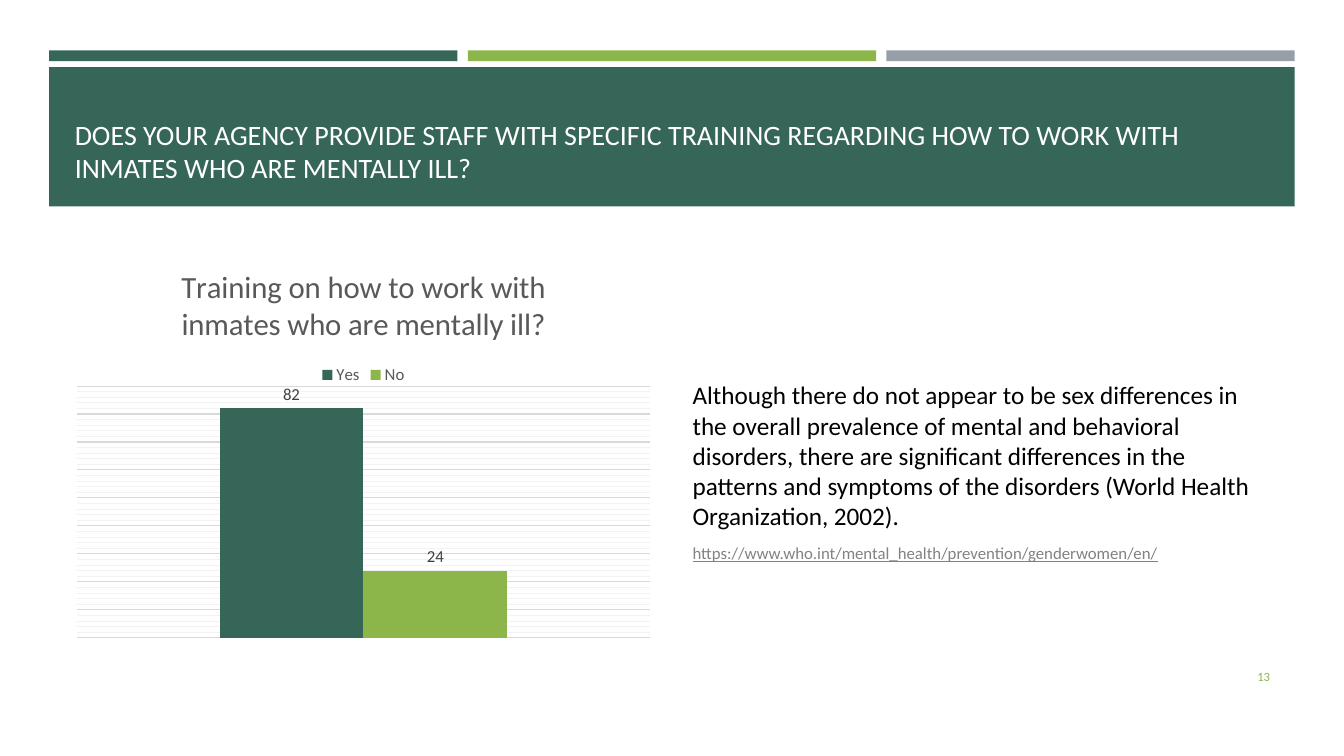
from copy import deepcopy

from lxml.etree import SubElement
from pptx import Presentation
from pptx.chart.data import CategoryChartData
from pptx.dml.color import RGBColor
from pptx.enum.chart import XL_CHART_TYPE as ChartType
from pptx.enum.chart import XL_LABEL_POSITION as LabelPosition
from pptx.enum.chart import XL_LEGEND_POSITION as LegendPosition
from pptx.enum.shapes import MSO_SHAPE as Preset
from pptx.enum.text import MSO_ANCHOR as Anchor
from pptx.enum.text import MSO_AUTO_SIZE as AutoSize
from pptx.enum.text import PP_ALIGN as Align
from pptx.oxml import parse_xml
from pptx.oxml.ns import nsdecls, qn
from pptx.util import Cm, Pt

COLORS = {
    "green": "366658", "lime": "8CB64A", "grey": "969FA7",
    "white": "FFFFFF", "black": "000000", "link": "828282",
    "heading": "595959", "label": "404040", "grid": "D9D9D9", "minor": "F2F2F2",
}


def color(name):
    return RGBColor.from_string(COLORS[name])


def set_font(font, size, tint, name="Calibri", underline=None):
    font.name, font.size, font.bold = name, Pt(size), False
    font.underline = underline
    font.color.rgb = color(tint)


def write(paragraph, text, size=18, tint="black", align=Align.LEFT,
          before=0, after=0, underline=None):
    paragraph.alignment = align
    paragraph.space_before, paragraph.space_after = Pt(before), Pt(after)
    run = paragraph.add_run()
    run.text = text
    set_font(run.font, size, tint, underline=underline)


class SlideBuilder:
    def __init__(self, slide):
        self.slide = slide

    def place(self, shape, left, top, width, height):
        shape.left, shape.top = Cm(left), Cm(top)
        shape.width, shape.height = Cm(width), Cm(height)

    def frame(self, shape, anchor):
        frame = shape.text_frame
        frame.word_wrap, frame.auto_size = True, AutoSize.NONE
        frame.vertical_anchor = anchor
        return frame

    def band(self, left, top, width, height, tint):
        band = self.slide.shapes.add_shape(
            Preset.RECTANGLE, Cm(left), Cm(top), Cm(width), Cm(height))
        band.shadow.inherit = False
        band.fill.solid()
        band.fill.fore_color.rgb = color(tint)
        band.line.fill.background()

    def title(self, text, *box):
        title = self.slide.shapes.title
        self.place(title, *box)
        title.element.getparent().append(title.element)
        write(self.frame(title, Anchor.BOTTOM).paragraphs[0], text, 20, "white")

    def body(self, entries, *box):
        body = self.slide.placeholders[1]
        self.place(body, *box)
        frame = self.frame(body, Anchor.MIDDLE)
        frame.margin_top = Cm(1.4)
        for index, (text, style) in enumerate(entries):
            paragraph = frame.add_paragraph() if index else frame.paragraphs[0]
            write(paragraph, text, after=6, **style)
            properties = paragraph._p.get_or_add_pPr()
            properties.set("marL", "0")
            properties.set("indent", "0")
            SubElement(properties, qn("a:buNone"))

    def number(self, text, *box):
        number = self.slide.shapes.add_textbox(*map(Cm, box))
        write(self.frame(number, Anchor.MIDDLE).paragraphs[0], text, 9, "lime",
              align=Align.RIGHT)

    def column_chart(self, heading, category, answers, *box):
        data = CategoryChartData()
        data.categories = [category]
        for name, count, tint in answers:
            data.add_series(name, [count])
        chart = self.slide.shapes.add_chart(
            ChartType.COLUMN_CLUSTERED, *map(Cm, box), data).chart
        set_font(chart.font, 10, "black")
        chart.has_title = True
        write(chart.chart_title.text_frame.paragraphs[0], heading, 22, "heading",
              align=Align.CENTER)
        chart.chart_title.include_in_layout = False
        chart.has_legend = True
        chart.legend.position = LegendPosition.TOP
        chart.legend.include_in_layout = False
        set_font(chart.legend.font, 12, "heading")

        chart.category_axis.visible = False
        self.rule_axis(chart)
        plot = chart.plots[0]
        plot.gap_width, plot.overlap, plot.vary_by_categories = 199, 0, False
        for series, (name, count, tint) in zip(plot.series, answers):
            series.format.fill.solid()
            series.format.fill.fore_color.rgb = color(tint)
            labels = series.data_labels
            labels.show_value = True
            labels.position = LabelPosition.OUTSIDE_END
            set_font(labels.font, 12, "label")
        self.fix_plot_area(chart, x=0.02, y=0.35, w=0.96, h=0.63)

    def rule_axis(self, chart):
        counts = chart.value_axis
        counts.visible = False
        counts.minimum_scale, counts.maximum_scale = 0, 90
        counts.major_unit, counts.minor_unit = 10, 2
        counts.has_major_gridlines = counts.has_minor_gridlines = True
        line = counts.major_gridlines.format.line
        line.width = Pt(0.75)
        line.color.rgb = color("grid")
        major = chart.element.find(".//" + qn("c:majorGridlines"))
        minor = chart.element.find(".//" + qn("c:minorGridlines"))
        minor.append(deepcopy(major.find(qn("c:spPr"))))
        minor.find(".//" + qn("a:srgbClr")).set("val", COLORS["minor"])

    def fix_plot_area(self, chart, **fractions):
        area = chart.element.find(".//" + qn("c:plotArea"))
        for layout in area.findall(qn("c:layout")):
            area.remove(layout)
        sizes = "".join(f'<c:{key} val="{value}"/>' for key, value in fractions.items())
        area.insert(0, parse_xml(
            f'<c:layout {nsdecls("c")}><c:manualLayout><c:layoutTarget val="inner"/>'
            f'<c:xMode val="edge"/><c:yMode val="edge"/>{sizes}'
            '</c:manualLayout></c:layout>'))


def main():
    deck = Presentation()
    deck.slide_width, deck.slide_height = Cm(33.87), Cm(19.05)
    page = SlideBuilder(deck.slides.add_slide(deck.slide_layouts[1]))

    for column, tint in enumerate(("green", "lime", "grey")):
        page.band(1.24 + column * 10.55, 1.27, 10.29, 0.27, tint)
    page.band(1.24, 1.69, 31.39, 3.51, "green")
    page.title("DOES YOUR AGENCY PROVIDE STAFF WITH SPECIFIC TRAINING REGARDING "
               "HOW TO WORK WITH INMATES WHO ARE MENTALLY ILL?",
               1.63, 2.03, 30.63, 2.74)
    page.column_chart("Training on how to work with inmates who are mentally ill?", "1",
                      [("Yes", 82, "green"), ("No", 24, "lime")],
                      1.63, 6.2, 15.06, 10.08)
    page.body([
        ("Although there do not appear to be sex differences in the overall "
         "prevalence of mental and behavioral disorders, there are significant "
         "differences in the patterns and symptoms of the disorders "
         "(World Health Organization, 2002).", {}),
        ("https://www.who.int/mental_health/prevention/genderwomen/en/",
         {"size": 12, "tint": "link", "before": 2.4, "underline": True}),
    ], 17.2, 6.2, 15.06, 10.08)
    page.number("13", 29.34, 16.54, 2.92, 1.02)
    deck.save("out.pptx")


if __name__ == "__main__":
    main()
